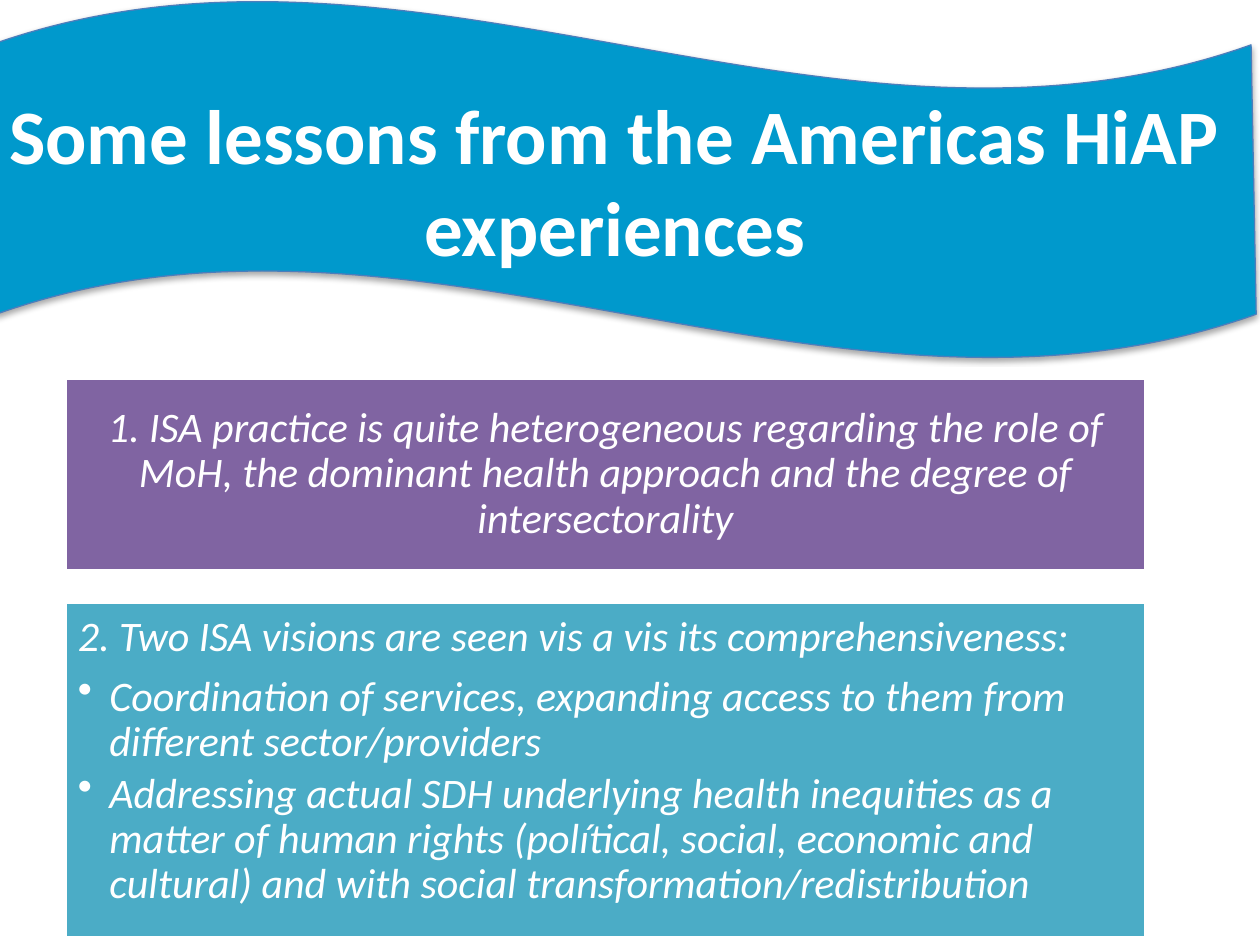
from lxml.etree import SubElement
from pptx import Presentation
from pptx.dml.color import RGBColor
from pptx.enum.shapes import MSO_SHAPE as Preset
from pptx.enum.text import MSO_ANCHOR as Anchor, PP_ALIGN as Align
from pptx.oxml import parse_xml
from pptx.oxml.ns import nsdecls, qn
from pptx.util import Inches, Pt

TITLE = "Some lessons from the Americas HiAP experiences"
FONT, WHITE = "Calibri", "FFFFFF"
LEFT, WIDTH = 0.52, 8.57

# top, height, fill, anchor, alignment, lead line, bullets
LESSONS = [
    (3, 1.53, "8064A2", Anchor.MIDDLE, Align.CENTER,
     "1. ISA practice is quite heterogeneous regarding the role of MoH, "
     "the dominant health approach and the degree of intersectorality", []),
    (4.78, 2.66, "4BACC6", Anchor.TOP, Align.LEFT,
     "2. Two ISA visions are seen vis a vis its comprehensiveness:",
     ["Coordination of services, expanding access to them from different "
      "sector/providers",
      "Addressing actual SDH underlying health inequities as a matter of human "
      "rights (polítical, social, economic and cultural) and with social "
      "transformation/redistribution"]),
]
SHADOW = f"""<a:effectLst {nsdecls('a')}>
  <a:outerShdw blurRad="40000" dist="23000" dir="5400000" rotWithShape="0">
    <a:srgbClr val="000000"><a:alpha val="35000"/></a:srgbClr>
  </a:outerShdw></a:effectLst>"""


def color(value):
    return RGBColor.from_string(value)


def add_panel(preset, box, fill, line, line_width):
    panel = slide.shapes.add_shape(preset, *map(Inches, box))
    panel.shadow.inherit = False
    panel.fill.solid()
    panel.fill.fore_color.rgb = color(fill)
    panel.line.color.rgb = color(line)
    panel.line.width = Pt(line_width)
    return panel


def set_margins(frame, margin):
    frame.word_wrap = True
    frame.margin_left = frame.margin_right = Inches(margin)
    frame.margin_top = frame.margin_bottom = Inches(margin)


def format_runs(paragraph, size, bold=False, italic=False):
    for run in paragraph.runs:
        run.font.name, run.font.size = FONT, Pt(size)
        run.font.bold, run.font.italic = bold, italic
        run.font.color.rgb = color(WHITE)


def add_bullet(paragraph):
    properties = paragraph._p.get_or_add_pPr()
    properties.set("marL", str(Inches(0.25)))
    properties.set("indent", str(-Inches(0.25)))
    SubElement(properties, qn("a:buChar"), char="•")


prs = Presentation()
prs.slide_width, prs.slide_height = Inches(10), Inches(7.5)
slide = prs.slides.add_slide(prs.slide_layouts[5])

banner = add_panel(Preset.WAVE, (-0.07, 0, 10.04, 2.85), "0099CC", "4B7EBC", 0.75)
banner.adjustments[0], banner.adjustments[1] = 0.125, 0.002
banner_properties = banner._element.spPr
banner_properties.remove(banner_properties.find(qn("a:effectLst")))
banner_properties.append(parse_xml(SHADOW))

title = slide.shapes.title
title._element.addprevious(banner._element)  # banner lies behind the title
title.left, title.top, title.width, title.height = map(Inches, (-0.02, 0.4, 9.8, 2.05))
title.text_frame.text = TITLE
title.text_frame.vertical_anchor = Anchor.MIDDLE
set_margins(title.text_frame, 0.05)
title.text_frame.paragraphs[0].alignment = Align.CENTER
format_runs(title.text_frame.paragraphs[0], 44, bold=True)

for top, height, fill, anchor, alignment, lead, bullets in LESSONS:
    panel = add_panel(Preset.RECTANGLE, (LEFT, top, WIDTH, height), fill, WHITE, 2)
    frame = panel.text_frame
    set_margins(frame, 0.1)
    frame.vertical_anchor = anchor
    frame.text = "\n".join([lead, *bullets])
    for index, paragraph in enumerate(frame.paragraphs):
        paragraph.alignment = alignment
        paragraph.line_spacing = 0.9
        paragraph.space_after = Pt(3.6 if index else 8.4)
        if index:
            add_bullet(paragraph)
        format_runs(paragraph, 24, italic=True)

prs.save("out.pptx")
